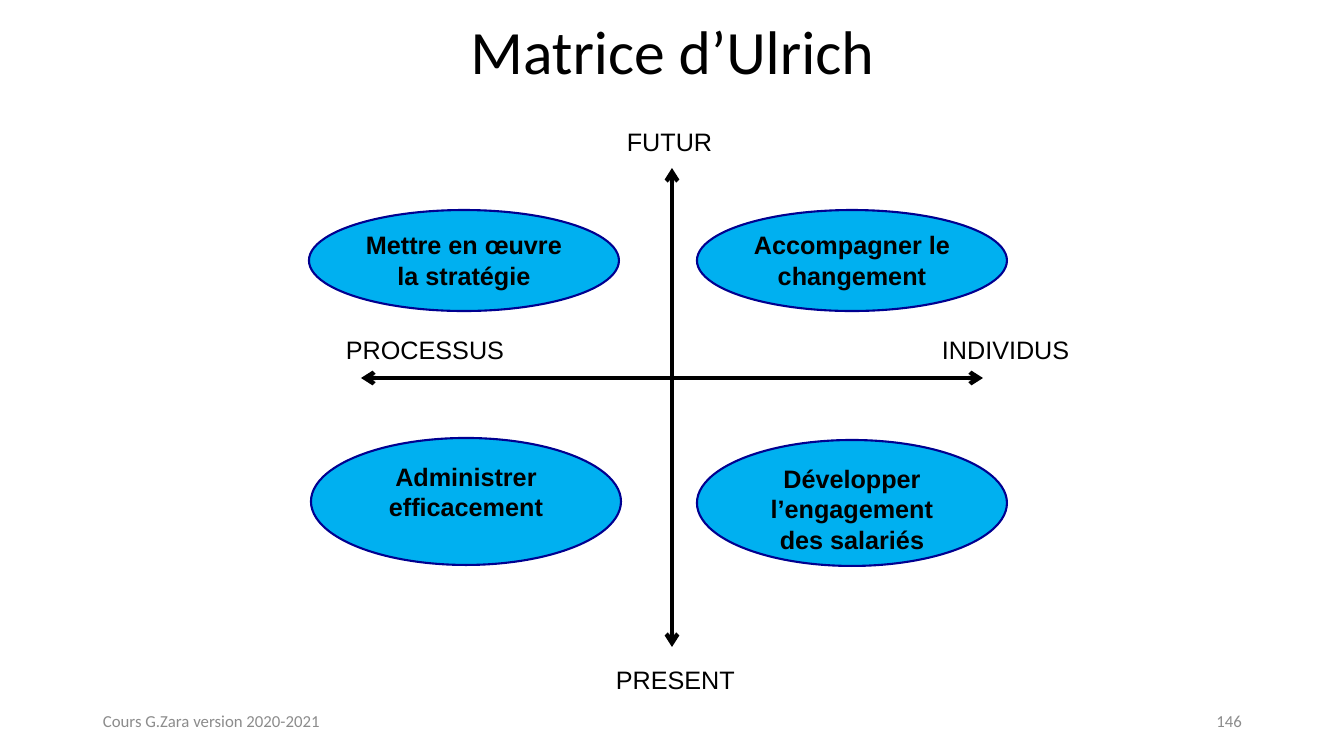
import pptx
import pptx.dml.color
import pptx.enum.shapes
import pptx.enum.text
import pptx.oxml
import pptx.oxml.ns
import pptx.util

ALIGN = pptx.enum.text.PP_ALIGN
ANCHOR = pptx.enum.text.MSO_ANCHOR
EMU_PER_PX = 914400 / 100.8


def px(*lengths):
    return [pptx.util.Emu(round(length * EMU_PER_PX)) for length in lengths]


def write(shape, text, size, font, color, align=ALIGN.LEFT, anchor=ANCHOR.TOP, bold=False):
    frame = shape.text_frame
    frame.text = text
    frame.word_wrap = True
    frame.vertical_anchor = anchor
    paragraph = frame.paragraphs[0]
    paragraph.alignment = align
    style = paragraph.runs[0].font
    style.size = pptx.util.Pt(size)
    style.name = font
    style.bold = bold
    style.color.rgb = pptx.dml.color.RGBColor.from_string(color)


presentation = pptx.Presentation()
presentation.slide_width, presentation.slide_height = px(1344, 756)
slide = presentation.slides.add_slide(presentation.slide_layouts[6])
shapes = slide.shapes

title = shapes.add_textbox(*px(219, -8, 907, 126))
write(title, "Matrice d’Ulrich", 44, "Calibri", "000000", ALIGN.CENTER, ANCHOR.MIDDLE)
title.text_frame.paragraphs[0].line_spacing = 0.9

for ends in [(361, 378, 983, 378), (672, 168, 672, 647)]:
    axis = shapes.add_connector(pptx.enum.shapes.MSO_CONNECTOR.STRAIGHT, *px(*ends))
    axis.line.width = pptx.util.Pt(3)
    axis.line.color.rgb = pptx.dml.color.RGBColor.from_string("000000")
    outline = axis.line._get_or_add_ln()
    for end in ["a:headEnd", "a:tailEnd"]:
        arrowhead = pptx.oxml.ns.qn(end)
        outline.append(outline.makeelement(arrowhead, {"type": "arrow"}))
    properties = axis._element.spPr
    properties.append(properties.makeelement(pptx.oxml.ns.qn("a:effectLst"), {}))

axis_labels = [
    ("FUTUR", 617, 121, 107),
    ("PRESENT", 606, 659, 140),
    ("INDIVIDUS", 932, 329, 149),
    ("PROCESSUS", 336, 329, 180),
]
for text, left, top, width in axis_labels:
    label = shapes.add_textbox(*px(left, top, width, 40))
    write(label, text, 18, "Arial", "000000")
    label.text_frame.word_wrap = False
    label.text_frame.auto_size = pptx.enum.text.MSO_AUTO_SIZE.SHAPE_TO_FIT_TEXT

roles = [
    ("Accompagner le changement", 697, 210, 101),
    ("Mettre en œuvre la stratégie", 309, 210, 101),
    ("Administrer efficacement", 311, 438, 127),
    ("Développer l’engagement des salariés", 697, 440, 126),
]
for text, left, top, height in roles:
    role = shapes.add_shape(pptx.enum.shapes.MSO_SHAPE.OVAL, *px(left, top, 310, height))
    role.shadow.inherit = False
    role.fill.solid()
    role.fill.fore_color.rgb = pptx.dml.color.RGBColor.from_string("00B0F0")
    role.line.color.rgb = pptx.dml.color.RGBColor.from_string("000090")
    role.line.width = pptx.util.Pt(1.5)
    write(role, text, 18, "Arial", "000000", ALIGN.CENTER, bold=True)

footers = [
    ("Cours G.Zara version 2020-2021", 93, ALIGN.LEFT),
    ("146", 950, ALIGN.RIGHT),
]
for text, left, align in footers:
    footer = shapes.add_textbox(*px(left, 701, 302, 40))
    write(footer, text, 12, "Calibri", "8C8C8C", align, ANCHOR.MIDDLE)

presentation.save("out.pptx")
